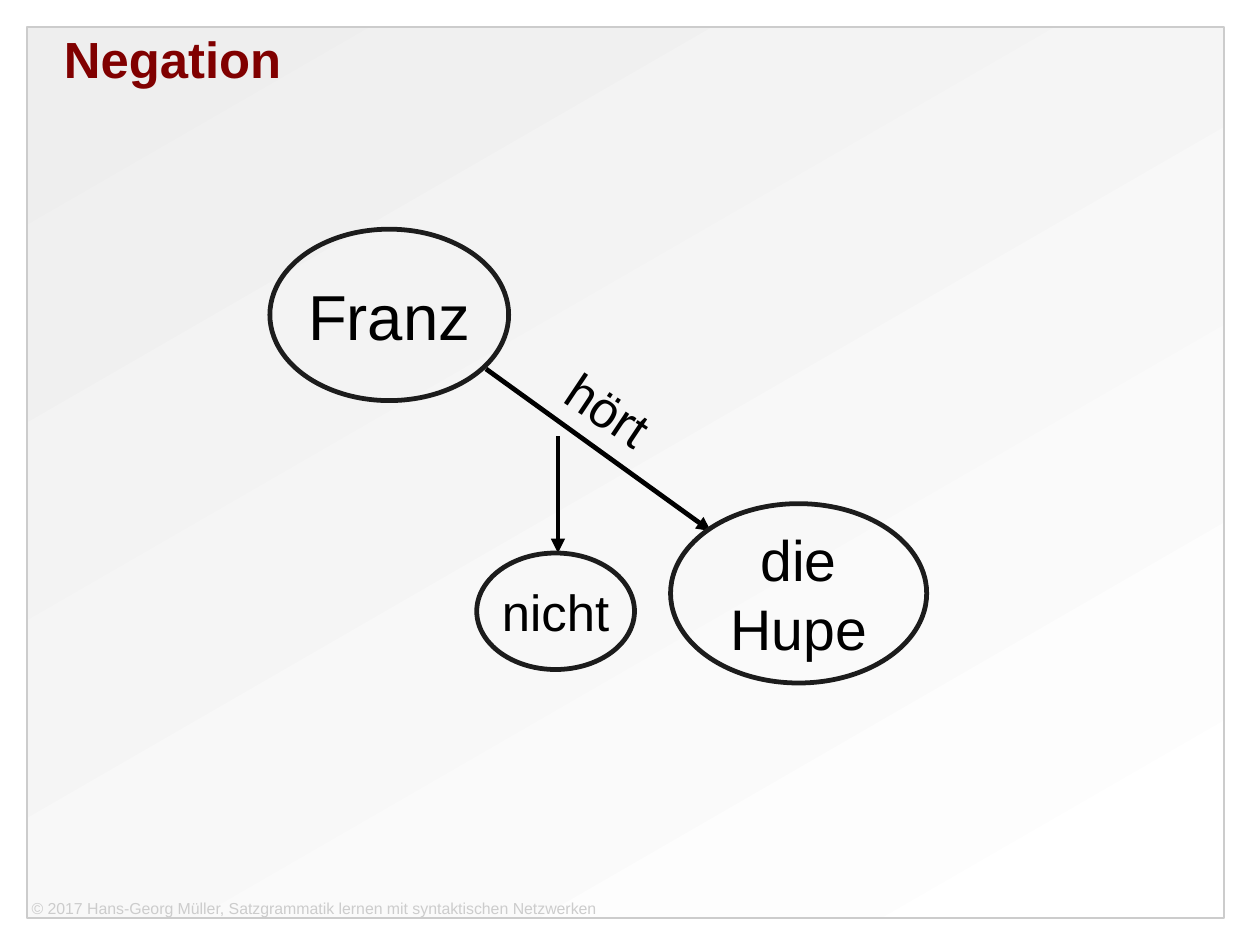
from lxml import etree
from pptx import Presentation
from pptx.dml.color import RGBColor
from pptx.enum.shapes import MSO_CONNECTOR, MSO_SHAPE
from pptx.enum.text import MSO_ANCHOR, PP_ALIGN
from pptx.oxml.ns import qn
from pptx.util import Cm, Inches, Pt

LEFT, CENTER = PP_ALIGN.LEFT, PP_ALIGN.CENTER
TOP, MIDDLE = MSO_ANCHOR.TOP, MSO_ANCHOR.MIDDLE
RECT, OVAL = MSO_SHAPE.RECTANGLE, MSO_SHAPE.OVAL
STRAIGHT = MSO_CONNECTOR.STRAIGHT

# Content; all places are percent of the slide's width and height
WIDE, HIGH = Cm(28), Cm(21)
TITLE = ("Negation", (5.08, 2.95, 90, 12.09))
FOOTER = ("© 2017 Hans-Georg Müller, Satzgrammatik lernen mit syntaktischen Netzwerken",
          (2.14, 95.1, 95, 1.93))
FRAME = (2.14, 2.86, 95, 94.29)
NODES = [
    (["Franz"], 40, (21.42, 24.25, 18.95, 18.14)),
    (["die", "Hupe"], 36, (53.22, 53.3, 20.33, 18.98)),
    (["nicht"], 32, (37.84, 58.52, 12.52, 12.33)),
]
ARROWS = [(38.57, 39.04, 56.42, 56.2), (44.28, 46.19, 44.28, 58.52)]
VERB = ("hört", (43.65, 40.75, 12.25, 7.74), 33.8)


def color(code):
    return RGBColor.from_string(code)


def place(box):
    """Turn percent pairs into slide lengths."""
    return [int(part * (HIGH if i % 2 else WIDE) / 100) for i, part in enumerate(box)]


def write(shape, lines, size, ink="000000", bold=False, align=LEFT,
          anchor=TOP, pad=(0, 0, 0, 0), wrap=True):
    frame = shape.text_frame
    frame.word_wrap, frame.vertical_anchor = wrap, anchor
    (frame.margin_left, frame.margin_top,
     frame.margin_right, frame.margin_bottom) = map(Inches, pad)
    frame.text = "\n".join(lines)
    for para in frame.paragraphs:
        para.alignment = align
        for run in para.runs:
            font = run.font
            font.name, font.size, font.bold = "Arial", Pt(size), bold
            font.color.rgb = color(ink)


def stroke(shape, ink, width):
    shape.line.color.rgb = color(ink)
    shape.line.width = Pt(width)


def draw(shapes, kind, box, ink, width):
    shape = shapes.add_shape(kind, *place(box))
    shape.shadow.inherit = False
    stroke(shape, ink, width)
    return shape


def arrow(shapes, ends):
    link = shapes.add_connector(STRAIGHT, *place(ends))
    stroke(link, "000000", 3)
    etree.SubElement(link.line._get_or_add_ln(), qn("a:tailEnd"), type="triangle")
    etree.SubElement(link.element.spPr, qn("a:effectLst"))


def main():
    deck = Presentation()
    deck.slide_width, deck.slide_height = WIDE, HIGH
    shapes = deck.slides.add_slide(deck.slide_layouts[5]).shapes

    panel = draw(shapes, RECT, FRAME, "CCCCCC", 1.5)
    panel.fill.gradient()
    panel.fill.gradient_angle = 300
    for stop, code in zip(panel.fill.gradient_stops, ("EEEEEE", "FFFFFF")):
        stop.color.rgb = color(code)

    text, box = FOOTER
    write(shapes.add_textbox(*place(box)), [text], 10, ink="CCCCCC", pad=(0.04, 0, 0, 0))

    for ends in ARROWS:
        arrow(shapes, ends)
    for lines, size, box in NODES:
        node = draw(shapes, OVAL, box, "1C1C1C", 3)
        node.fill.background()
        write(node, lines, size, align=CENTER, anchor=MIDDLE,
              pad=(0.12, 0.07, 0.12, 0.07), wrap=False)

    text, box = TITLE
    title = shapes.title
    title.left, title.top, title.width, title.height = place(box)
    write(title, [text], 32, ink="800000", bold=True)
    shapes.element.append(title.element)  # bring in front of the panel

    text, box, angle = VERB
    verb = shapes.add_textbox(*place(box))
    verb.rotation = angle
    write(verb, [text], 32, pad=(0.1, 0.05, 0.1, 0.05))

    deck.save("out.pptx")


if __name__ == "__main__":
    main()
